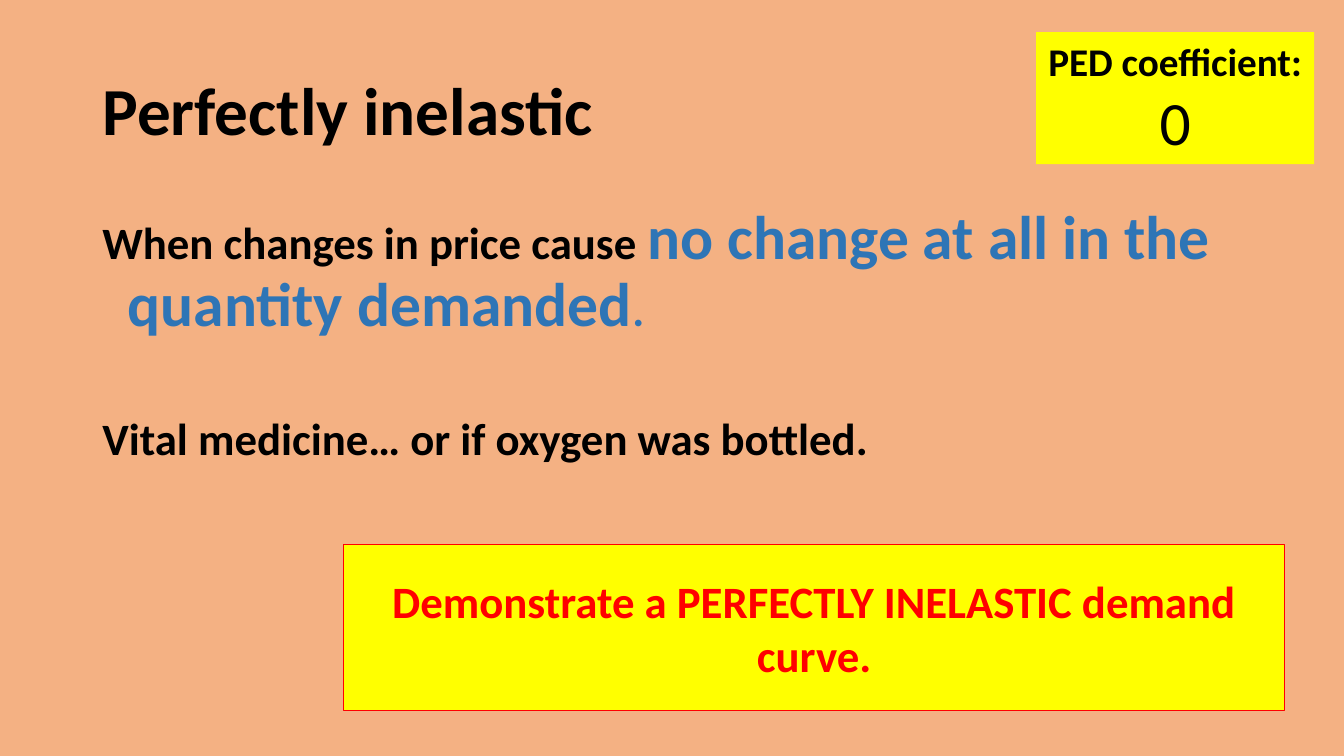
from pptx import Presentation
from pptx.dml.color import RGBColor
from pptx.enum.shapes import MSO_SHAPE
from pptx.enum.text import MSO_ANCHOR, MSO_AUTO_SIZE, PP_ALIGN
from pptx.util import Cm, Pt

RECTANGLE = MSO_SHAPE.RECTANGLE
TOP, MIDDLE = MSO_ANCHOR.TOP, MSO_ANCHOR.MIDDLE
LEFT, CENTER = PP_ALIGN.LEFT, PP_ALIGN.CENTER
NO_AUTOFIT = MSO_AUTO_SIZE.NONE

PEACH = RGBColor(0xF4, 0xB1, 0x83)
YELLOW = RGBColor(0xFF, 0xFF, 0x00)
RED = RGBColor(0xFF, 0x00, 0x00)
BLUE = RGBColor(0x2E, 0x75, 0xB6)
BLACK = RGBColor(0x00, 0x00, 0x00)
FONT = "Calibri"


def add_run(paragraph, text, size=32, color=BLACK, bold=True):
    run = paragraph.add_run()
    run.text = text
    run.font.name = FONT
    run.font.size = Pt(size)
    run.font.bold = bold
    run.font.color.rgb = color


def write(frame, paragraphs, align=LEFT, anchor=TOP, wrap=True,
          line_spacing=1.0, space_before=(), hanging=0):
    """Fill a frame; each paragraph is a list of (text, run format) pairs."""
    frame.word_wrap = wrap
    frame.auto_size = NO_AUTOFIT
    frame.vertical_anchor = anchor
    for index, runs in enumerate(paragraphs):
        paragraph = frame.add_paragraph() if index else frame.paragraphs[0]
        paragraph.alignment = align
        paragraph.line_spacing = line_spacing
        if space_before:
            paragraph.space_before = Pt(space_before[index])
        if hanging:
            properties = paragraph._p.get_or_add_pPr()
            properties.set("marL", str(Cm(hanging)))
            properties.set("indent", str(-Cm(hanging)))
        for text, run_format in runs:
            add_run(paragraph, text, **run_format)


class SlideBuilder:
    def __init__(self, presentation, background):
        self.slide = presentation.slides.add_slide(presentation.slide_layouts[5])
        self.slide.background.fill.solid()
        self.slide.background.fill.fore_color.rgb = background

    def title(self, text, left, top, width, height):
        heading = self.slide.shapes.title
        heading.left, heading.top = Cm(left), Cm(top)
        heading.width, heading.height = Cm(width), Cm(height)
        write(heading.text_frame, [[(text, {"size": 48})]],
              anchor=MIDDLE, line_spacing=0.9)

    def text(self, paragraphs, left, top, width, height, **layout):
        box = self.slide.shapes.add_textbox(Cm(left), Cm(top), Cm(width), Cm(height))
        write(box.text_frame, paragraphs, **layout)

    def panel(self, paragraphs, left, top, width, height, outline=None, **layout):
        panel = self.slide.shapes.add_shape(
            RECTANGLE, Cm(left), Cm(top), Cm(width), Cm(height))
        panel.shadow.inherit = False
        panel.fill.solid()
        panel.fill.fore_color.rgb = YELLOW
        if outline is None:
            panel.line.fill.background()
        else:
            panel.line.color.rgb = outline
            panel.line.width = Pt(1)
        write(panel.text_frame, paragraphs, align=CENTER, **layout)


def main():
    presentation = Presentation()
    presentation.slide_width, presentation.slide_height = Cm(33.87), Cm(19.05)
    builder = SlideBuilder(presentation, PEACH)

    # Title
    builder.title("Perfectly inelastic", 2.33, 1.02, 29.21, 3.68)

    # Definition and examples
    definition = [
        ("When changes in price cause ", {}),
        ("no change at all in the quantity demanded", {"size": 44, "color": BLUE}),
        (".", {"color": BLUE}),
    ]
    examples = [("Vital medicine… or if oxygen was bottled.", {})]
    builder.text([definition, examples], 2.33, 5.08, 29.21, 12.09,
                 line_spacing=0.9, space_before=(10, 55), hanging=0.64)

    # Task
    task = [("Demonstrate a PERFECTLY INELASTIC demand curve.", {"color": RED})]
    builder.panel([task], 8.66, 13.72, 23.72, 4.19, outline=RED, anchor=MIDDLE)

    # Coefficient
    coefficient = [
        [("PED coefficient:", {"size": 28})],
        [("0", {"size": 44, "bold": False})],
    ]
    builder.panel(coefficient, 26.11, 0.81, 7.01, 3.33, wrap=False)

    presentation.save("out.pptx")


if __name__ == "__main__":
    main()
